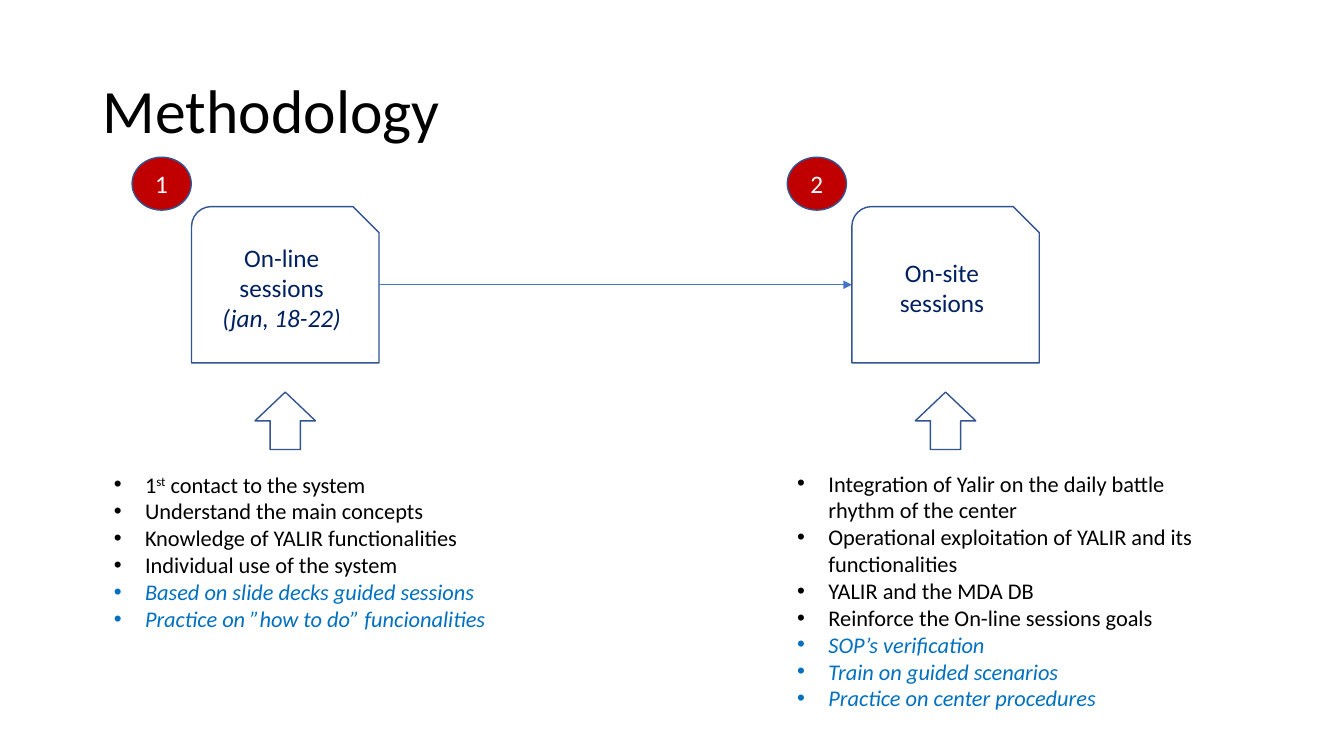
from lxml.etree import SubElement
from pptx import Presentation
from pptx.dml.color import RGBColor
from pptx.enum.shapes import MSO_CONNECTOR, MSO_SHAPE
from pptx.enum.text import MSO_ANCHOR, MSO_AUTO_SIZE, PP_ALIGN
from pptx.oxml.ns import qn
from pptx.util import Inches, Pt

BLACK = RGBColor(0x00, 0x00, 0x00)
WHITE = RGBColor(0xFF, 0xFF, 0xFF)
NAVY = RGBColor(0x00, 0x20, 0x60)
RED = RGBColor(0xC0, 0x00, 0x00)
BLUE = RGBColor(0x00, 0x70, 0xC0)
OUTLINE = RGBColor(0x32, 0x54, 0x91)
LINK = RGBColor(0x44, 0x72, 0xC4)

BOX_TOP, BOX_WIDTH, BOX_HEIGHT = 27.33, 13.95, 20.67
ARROW_WIDTH = 4.5

STAGES = [
    dict(number="1", box_left=14.25, badge_left=9.83,
         lines=[("On-line sessions", False), ("(jan, 18-22)", True)],
         notes_at=(7.73, 61.6, 38.78, 22.93),
         goals=[[("1", 0), ("st", 30000), (" contact to the system", 0)],
                "Understand the main concepts",
                "Knowledge of YALIR functionalities",
                "Individual use of the system"],
         practice=["Based on slide decks guided sessions",
                   "Practice on ”how to do” funcionalities"]),
    dict(number="2", box_left=63.38, badge_left=58.58,
         lines=[("On-site sessions", False)],
         notes_at=(58.58, 61.47, 31.43, 33.6),
         goals=["Integration of Yalir on the daily battle rhythm of the center",
                "Operational exploitation of YALIR and its functionalities",
                "YALIR and the MDA DB",
                "Reinforce the On-line sessions goals"],
         practice=["SOP’s verification",
                   "Train on guided scenarios",
                   "Practice on center procedures"]),
]


def write(paragraph, text, size=18, color=BLACK, italic=False, baseline=0):
    run = paragraph.add_run()
    run.text = text
    run.font.name = "Calibri"
    run.font.size = Pt(size)
    run.font.color.rgb = color
    run.font.italic = italic
    if baseline:
        run.font._element.set("baseline", str(baseline))


class MethodologySlide:
    """Draw slide elements on a grid of 100 columns by 100 rows."""

    def __init__(self, deck):
        self.column = deck.slide_width / 100
        self.row = deck.slide_height / 100
        self.slide = deck.slides.add_slide(deck.slide_layouts[5])

    def place(self, left, top, width, height):
        return (round(left * self.column), round(top * self.row),
                round(width * self.column), round(height * self.row))

    def title(self, text, *at):
        heading = self.slide.shapes.title
        heading.left, heading.top, heading.width, heading.height = self.place(*at)
        frame = heading.text_frame
        frame.vertical_anchor = MSO_ANCHOR.MIDDLE
        frame.auto_size = MSO_AUTO_SIZE.NONE
        paragraph = frame.paragraphs[0]
        paragraph.alignment = PP_ALIGN.LEFT
        paragraph.line_spacing = 0.9
        write(paragraph, text, size=44)

    def shape(self, kind, *at, fill=WHITE, color=NAVY, lines=(), adjust=()):
        figure = self.slide.shapes.add_shape(kind, *self.place(*at))
        figure.shadow.inherit = False
        figure.fill.solid()
        figure.fill.fore_color.rgb = fill
        figure.line.color.rgb = OUTLINE
        figure.line.width = Pt(1)
        for index, value in enumerate(adjust):
            figure.adjustments[index] = value
        frame = figure.text_frame
        frame.vertical_anchor = MSO_ANCHOR.MIDDLE
        for index, (text, italic) in enumerate(lines):
            paragraph = frame.add_paragraph() if index else frame.paragraphs[0]
            paragraph.alignment = PP_ALIGN.CENTER
            write(paragraph, text, color=color, italic=italic)

    def bullets(self, goals, practice, *at):
        notes = self.slide.shapes.add_textbox(*self.place(*at))
        frame = notes.text_frame
        frame.word_wrap = True
        frame.auto_size = MSO_AUTO_SIZE.SHAPE_TO_FIT_TEXT
        for index, item in enumerate(goals + practice):
            paragraph = frame.add_paragraph() if index else frame.paragraphs[0]
            properties = paragraph._p.get_or_add_pPr()
            properties.set("marL", str(Inches(0.31)))
            properties.set("indent", str(-Inches(0.31)))
            SubElement(properties, qn("a:buFont")).set("typeface", "Arial")
            SubElement(properties, qn("a:buChar")).set("char", "•")
            hands_on = index >= len(goals)
            for text, baseline in [(item, 0)] if isinstance(item, str) else item:
                write(paragraph, text, size=16, color=BLUE if hands_on else BLACK,
                      italic=hands_on, baseline=baseline)

    def arrow(self, start, end, level):
        left, top, width, _ = self.place(start, level, end - start, 0)
        link = self.slide.shapes.add_connector(
            MSO_CONNECTOR.STRAIGHT, left, top, left + width, top)
        link.line.color.rgb = LINK
        link.line.width = Pt(0.5)
        SubElement(link.line._get_or_add_ln(), qn("a:tailEnd")).set("type", "triangle")
        SubElement(link._element.spPr, qn("a:effectLst"))

    def stage(self, number, box_left, badge_left, lines, notes_at, goals, practice):
        self.shape(MSO_SHAPE.SNIP_ROUND_RECTANGLE, box_left, BOX_TOP, BOX_WIDTH,
                   BOX_HEIGHT, lines=lines, adjust=(0.127, 0.167))
        self.shape(MSO_SHAPE.OVAL, badge_left, 20.8, 4.4, 7, fill=RED,
                   color=WHITE, lines=[(number, False)])
        self.shape(MSO_SHAPE.UP_ARROW, box_left + (BOX_WIDTH - ARROW_WIDTH) / 2,
                   51.87, ARROW_WIDTH, 7.6)
        self.bullets(goals, practice, *notes_at)


def main():
    deck = Presentation()
    deck.slide_width, deck.slide_height = Inches(13.33), Inches(7.5)
    page = MethodologySlide(deck)
    page.title("Methodology", 6.9, 5.33, 86.25, 19.33)
    online, onsite = STAGES
    page.stage(**online)
    page.arrow(online["box_left"] + BOX_WIDTH, onsite["box_left"],
               BOX_TOP + BOX_HEIGHT / 2)
    page.stage(**onsite)
    deck.save("out.pptx")


if __name__ == "__main__":
    main()
